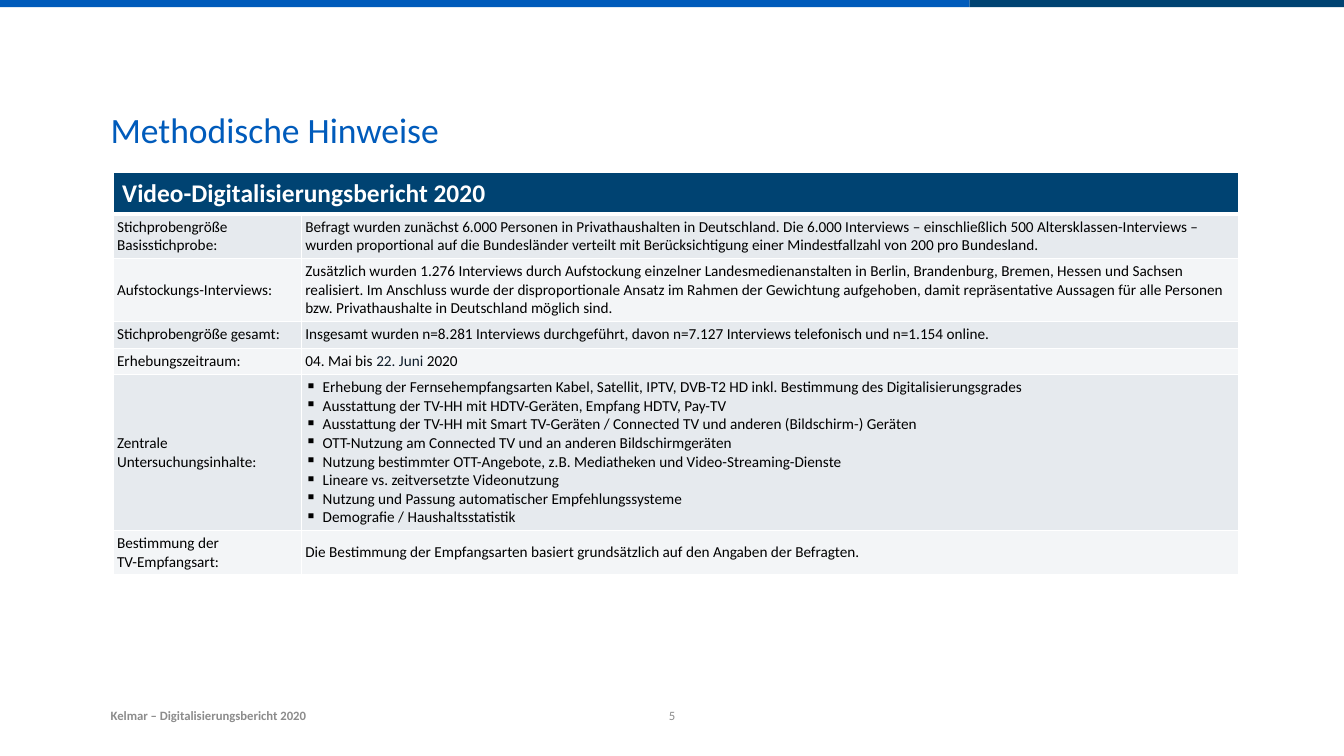
from dataclasses import dataclass

from lxml.etree import SubElement
from pptx import Presentation
from pptx.dml.color import RGBColor
from pptx.enum.shapes import MSO_SHAPE
from pptx.enum.text import MSO_ANCHOR, MSO_AUTO_SIZE, PP_ALIGN
from pptx.oxml import parse_xml
from pptx.oxml.ns import nsdecls, qn
from pptx.slide import Slide
from pptx.table import _Cell
from pptx.text.text import TextFrame, _Paragraph
from pptx.util import Pt


@dataclass(frozen=True)
class Theme:
    font: str = "Calibri"
    blue: str = "005BBB"
    navy: str = "004372"
    white: str = "FFFFFF"
    black: str = "000000"
    ink: str = "0E1C2A"
    grey: str = "8C8C8C"
    bands: tuple[str, str] = ("E6EAEE", "F3F5F7")
    title_size: float = 28
    header_size: float = 20
    body_size: float = 12
    footer_size: float = 10


@dataclass(frozen=True)
class Box:
    left: float
    top: float
    width: float
    height: float

    def lengths(self) -> tuple[Pt, Pt, Pt, Pt]:
        return Pt(self.left), Pt(self.top), Pt(self.width), Pt(self.height)


@dataclass(frozen=True)
class Style:
    size: float
    color: str
    bold: bool = False


@dataclass(frozen=True)
class Bar:
    box: Box
    color: str


@dataclass(frozen=True)
class Footer:
    box: Box
    text: str
    bold: bool
    alignment: PP_ALIGN


@dataclass(frozen=True)
class MethodRow:
    label: tuple[str, ...]
    paragraphs: tuple[tuple[tuple[str, str], ...], ...]
    height: float
    bulleted: bool = False
    rule_below: float = 1


THEME = Theme()
BODY = Style(THEME.body_size, THEME.black)
SLIDE_WIDTH, SLIDE_HEIGHT = 1058.4, 595.44
TITLE_BOX = Box(87.1, 85, 884.2, 42.5)
TABLE_BOX = Box(89.3, 136.1, 886, 312.5)
LABEL_WIDTH = 148.3
HEADER_HEIGHT = 32.4
HEADER_RULE = 3
BULLET_INDENT = 13.7

BARS = (
    Bar(Box(0, 0, 763.6, 5.6), THEME.blue),
    Bar(Box(763.6, 0, SLIDE_WIDTH - 763.6, 5.6), THEME.navy),
)
FOOTERS = (
    Footer(Box(87.1, 553, 301, 16.6), "Kelmar – Digitalisierungsbericht 2020", True, PP_ALIGN.LEFT),
    Footer(Box(517.7, 551.5, 23, 18), "5", False, PP_ALIGN.CENTER),
)


def plain(*texts: str) -> tuple[tuple[tuple[str, str], ...], ...]:
    return tuple(((text, THEME.black),) for text in texts)


ROWS = (
    MethodRow(("Stichprobengröße Basisstichprobe:",), plain(
        "Befragt wurden zunächst 6.000 Personen in Privathaushalten in Deutschland. Die 6.000 Interviews – "
        "einschließlich 500 Altersklassen-Interviews – wurden proportional auf die Bundesländer verteilt mit "
        "Berücksichtigung einer Mindestfallzahl von 200 pro Bundesland."), 35),
    MethodRow(("Aufstockungs-Interviews:",), plain(
        "Zusätzlich wurden 1.276 Interviews durch Aufstockung einzelner Landesmedienanstalten in Berlin, "
        "Brandenburg, Bremen, Hessen und Sachsen realisiert. Im Anschluss wurde der disproportionale Ansatz "
        "im Rahmen der Gewichtung aufgehoben, damit repräsentative Aussagen für alle Personen "
        "bzw. Privathaushalte in Deutschland möglich sind."), 49.5),
    MethodRow(("Stichprobengröße gesamt:",), plain(
        "Insgesamt wurden n=8.281 Interviews durchgeführt, davon n=7.127 Interviews telefonisch "
        "und n=1.154 online."), 20.9),
    MethodRow(("Erhebungszeitraum:",), (
        (("04. Mai bis ", THEME.black), ("22. Juni ", THEME.ink), ("2020", THEME.black)),), 20.9),
    MethodRow(("Zentrale Untersuchungsinhalte:",), plain(
        "Erhebung der Fernsehempfangsarten Kabel, Satellit, IPTV, DVB-T2 HD inkl. Bestimmung des Digitalisierungsgrades",
        "Ausstattung der TV-HH mit HDTV-Geräten, Empfang HDTV, Pay-TV",
        "Ausstattung der TV-HH mit Smart TV-Geräten / Connected TV und anderen (Bildschirm-) Geräten",
        "OTT-Nutzung am Connected TV und an anderen Bildschirmgeräten",
        "Nutzung bestimmter OTT-Angebote, z.B. Mediatheken und Video-Streaming-Dienste",
        "Lineare vs. zeitversetzte Videonutzung",
        "Nutzung und Passung automatischer Empfehlungssysteme",
        "Demografie / Haushaltsstatistik"), 122.5, bulleted=True, rule_below=1.5),
    MethodRow(("Bestimmung der ", "TV-Empfangsart:"), plain(
        "Die Bestimmung der Empfangsarten basiert grundsätzlich auf den Angaben der Befragten."), 35,
        rule_below=1.5),
)


def add_run(paragraph: _Paragraph, text: str, style: Style) -> None:
    run = paragraph.add_run()
    run.text = text
    run.font.name = THEME.font
    run.font.size = Pt(style.size)
    run.font.bold = style.bold
    run.font.color.rgb = RGBColor.from_string(style.color)


def prepare_frame(frame: TextFrame, anchor: MSO_ANCHOR) -> None:
    frame.margin_left = frame.margin_top = frame.margin_right = frame.margin_bottom = Pt(0)
    frame.word_wrap = True
    frame.auto_size = MSO_AUTO_SIZE.NONE
    frame.vertical_anchor = anchor


def add_bar(slide: Slide, bar: Bar) -> None:
    shape = slide.shapes.add_shape(MSO_SHAPE.RECTANGLE, *bar.box.lengths())
    shape.shadow.inherit = False
    shape.fill.solid()
    shape.fill.fore_color.rgb = RGBColor.from_string(bar.color)
    shape.line.fill.background()


def format_title(slide: Slide, text: str) -> None:
    title = slide.shapes.title
    title.left, title.top, title.width, title.height = TITLE_BOX.lengths()
    prepare_frame(title.text_frame, MSO_ANCHOR.TOP)
    paragraph = title.text_frame.paragraphs[0]
    paragraph.alignment = PP_ALIGN.LEFT
    add_run(paragraph, text, Style(THEME.title_size, THEME.blue))


def add_footer(slide: Slide, footer: Footer) -> None:
    frame = slide.shapes.add_textbox(*footer.box.lengths()).text_frame
    prepare_frame(frame, MSO_ANCHOR.BOTTOM)
    paragraph = frame.paragraphs[0]
    paragraph.alignment = footer.alignment
    add_run(paragraph, footer.text, Style(THEME.footer_size, THEME.grey, footer.bold))


def format_cell(cell: _Cell, fill: str, rule_above: float, rule_below: float) -> None:
    cell.vertical_anchor = MSO_ANCHOR.MIDDLE
    cell.margin_left, cell.margin_right = Pt(2.9), Pt(1.4)
    cell.margin_top = cell.margin_bottom = Pt(2.9)
    cell.fill.solid()
    cell.fill.fore_color.rgb = RGBColor.from_string(fill)
    properties = cell._tc.get_or_add_tcPr()
    borders = (("lnL", 1), ("lnR", 1), ("lnT", rule_above), ("lnB", rule_below))
    for position, (tag, width) in enumerate(borders):
        properties.insert(position, parse_xml(
            f'<a:{tag} {nsdecls("a")} w="{int(Pt(width))}"><a:solidFill>'
            f'<a:srgbClr val="{THEME.white}"/></a:solidFill></a:{tag}>'))


def add_bullet(paragraph: _Paragraph) -> None:
    properties = paragraph._p.get_or_add_pPr()
    properties.set("marL", str(int(Pt(BULLET_INDENT))))
    properties.set("indent", str(-int(Pt(BULLET_INDENT))))
    SubElement(properties, qn("a:buChar")).set("char", "▪")


def fill_label(cell: _Cell, lines: tuple[str, ...]) -> None:
    paragraph = cell.text_frame.paragraphs[0]
    for index, line in enumerate(lines):
        if index:
            paragraph.add_line_break()
        add_run(paragraph, line, BODY)


def fill_description(cell: _Cell, row: MethodRow) -> None:
    frame = cell.text_frame
    for index, runs in enumerate(row.paragraphs):
        paragraph = frame.add_paragraph() if index else frame.paragraphs[0]
        if row.bulleted:
            add_bullet(paragraph)
        for text, color in runs:
            add_run(paragraph, text, Style(THEME.body_size, color))


def add_method_table(slide: Slide, heading: str) -> None:
    table = slide.shapes.add_table(len(ROWS) + 1, 2, *TABLE_BOX.lengths()).table
    table.first_row = table.horz_banding = False
    table.columns[0].width = Pt(LABEL_WIDTH)
    table.columns[1].width = Pt(TABLE_BOX.width - LABEL_WIDTH)
    table.rows[0].height = Pt(HEADER_HEIGHT)
    header = table.cell(0, 0)
    header.merge(table.cell(0, 1))
    for column in range(2):
        format_cell(table.cell(0, column), THEME.navy, 1, HEADER_RULE)
    header.margin_left = Pt(7)
    add_run(header.text_frame.paragraphs[0], heading, Style(THEME.header_size, THEME.white, True))
    rule_above = HEADER_RULE
    for index, row in enumerate(ROWS, start=1):
        table.rows[index].height = Pt(row.height)
        for column in range(2):
            format_cell(table.cell(index, column), THEME.bands[(index - 1) % 2], rule_above, row.rule_below)
        fill_label(table.cell(index, 0), row.label)
        fill_description(table.cell(index, 1), row)
        rule_above = row.rule_below


def main() -> None:
    """Build the slide with the survey method notes."""
    presentation = Presentation()
    presentation.slide_width, presentation.slide_height = Pt(SLIDE_WIDTH), Pt(SLIDE_HEIGHT)
    slide = presentation.slides.add_slide(presentation.slide_layouts[5])
    for bar in BARS:
        add_bar(slide, bar)
    format_title(slide, "Methodische Hinweise")
    add_method_table(slide, "Video-Digitalisierungsbericht 2020")
    for footer in FOOTERS:
        add_footer(slide, footer)
    presentation.save("out.pptx")


if __name__ == "__main__":
    main()
